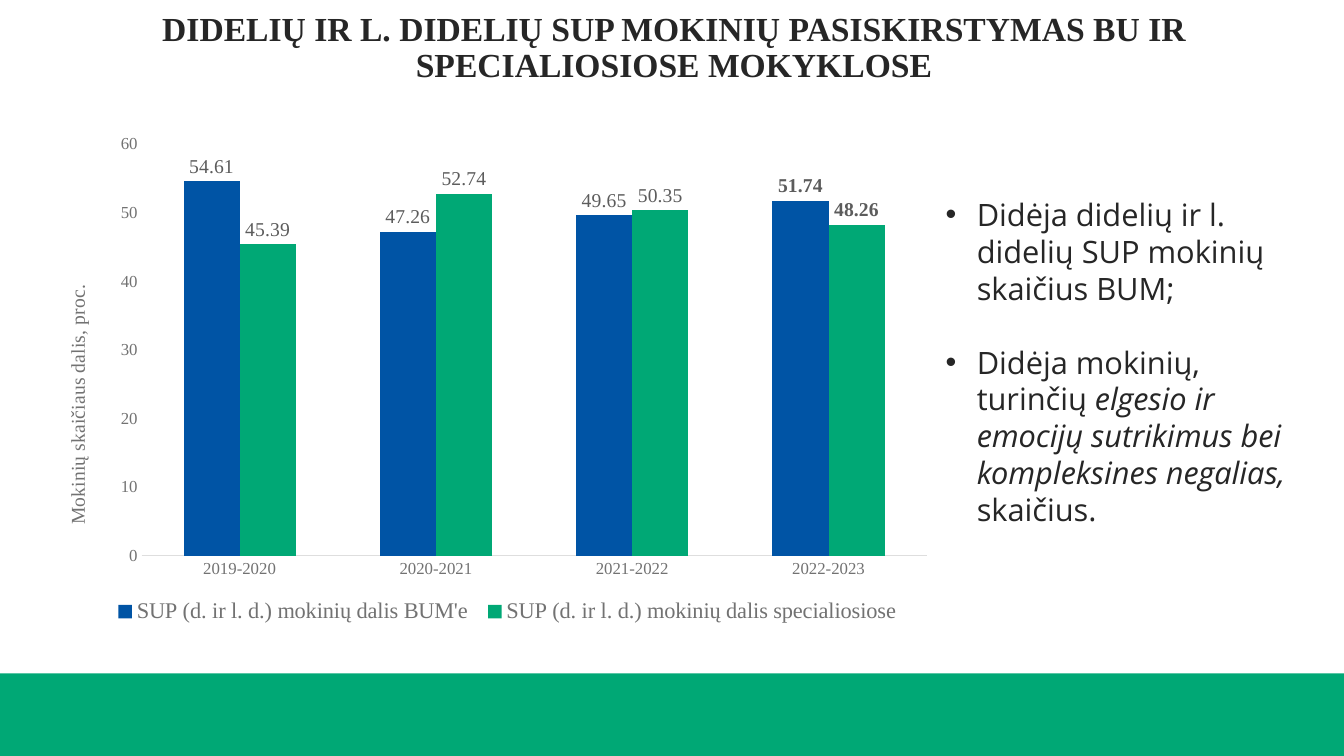
from dataclasses import dataclass

from lxml import etree
from pptx import Presentation, util as u
from pptx.chart.data import CategoryChartData
from pptx.dml.color import RGBColor
from pptx.enum import chart as ch, shapes, text
from pptx.oxml import ns


@dataclass(frozen=True)
class Theme:
    blue: str = "0054A5"
    green: str = "00A875"
    ink: str = "262626"
    gray: str = "727272"
    label: str = "5C5C5C"
    rule: str = "DEDEDE"
    serif: str = "Times New Roman"
    sans: str = "Open Sans"
    head: int = 24
    body: int = 22
    key: int = 16
    value: int = 14
    tick: int = 12


def put(item, **values):
    for name, value in values.items():
        setattr(item, name, value)


def add(parent, tag, **values):
    return etree.SubElement(parent, ns.qn(tag), values)


class Board:
    def __init__(self, deck, theme):
        self.theme = theme
        self.slide = deck.slides.add_slide(deck.slide_layouts[6])

    def paint(self, fill, color):
        fill.solid()
        fill.fore_color.rgb = RGBColor.from_string(color)

    def style(self, font, color, size, name, **more):
        put(font, size=u.Pt(size), name=name, **more)
        self.paint(font.fill, color)

    def band(self, *box):
        bar = self.slide.shapes.add_shape(shapes.MSO_SHAPE.RECTANGLE, *map(u.Inches, box))
        bar.shadow.inherit = False
        self.paint(bar.fill, self.theme.green)
        bar.line.fill.background()

    def frame(self, *box, **values):
        frame = self.slide.shapes.add_textbox(*map(u.Inches, box)).text_frame
        put(frame, word_wrap=True, **values)
        return frame

    def title(self, words, *box):
        t = self.theme
        para = self.frame(*box, vertical_anchor=text.MSO_ANCHOR.BOTTOM).paragraphs[0]
        put(para, text=words, alignment=text.PP_ALIGN.CENTER, line_spacing=0.9)
        self.style(para.runs[0].font, t.ink, t.head, t.serif, bold=True)

    def bullets(self, items, gap, *box):
        t = self.theme
        frame = self.frame(*box)
        for i, runs in enumerate(items):
            para = frame.add_paragraph() if i else frame.paragraphs[0]
            props = para._p.get_or_add_pPr()
            put(para, space_before=u.Pt(gap if i else 0))
            indent = u.Inches(0.31)
            props.set("marL", str(indent))
            props.set("indent", str(-indent))
            add(props, "a:buFont", typeface="Arial")
            add(props, "a:buChar", char="•")
            for words, slant in runs:
                run = para.add_run()
                run.text = words
                self.style(run.font, t.ink, t.body, t.sans, italic=slant)

    def place(self, item, **spots):
        layout = item.find(ns.qn("c:layout"))
        if layout is None:
            layout = etree.Element(ns.qn("c:layout"))
            before = item.find(ns.qn("c:tx"))
            if before is None:
                before = item.find(ns.qn("c:legendPos"))
            if before is None:
                item.insert(0, layout)
            else:
                before.addnext(layout)
        for old in list(layout):
            layout.remove(old)
        manual = add(layout, "c:manualLayout")
        for name, value in spots.items():
            add(manual, f"c:{name}", val=str(value))

    def columns(self, cats, series, label, *box):
        t = self.theme
        data = CategoryChartData(number_format="0.00")
        data.categories = cats
        for name, values, _ in series:
            data.add_series(name, values)
        chart = self.slide.shapes.add_chart(
            ch.XL_CHART_TYPE.COLUMN_CLUSTERED, *map(u.Inches, box), data).chart
        put(chart, has_title=False, has_legend=True)
        self.style(chart.font, t.ink, 10, t.sans)
        plot = chart.plots[0]
        put(plot, gap_width=150, overlap=0, vary_by_categories=False)
        for bars, (_, values, color) in zip(plot.series, series):
            self.paint(bars.format.fill, color)
            marks = bars.data_labels
            last = bars.points[len(values) - 1].data_label
            for mark, bold in ((last, True), (marks, False)):
                self.style(mark.font, t.label, t.value, t.serif, bold=bold)
                mark.position = ch.XL_LABEL_POSITION.OUTSIDE_END
            put(marks, show_value=True, number_format="0.00", number_format_is_linked=False)
        none = ch.XL_TICK_MARK.NONE
        for axis in (chart.category_axis, chart.value_axis):
            put(axis, has_major_gridlines=False, major_tick_mark=none, minor_tick_mark=none)
            self.style(axis.tick_labels.font, t.gray, t.tick, t.serif)
        line = chart.category_axis.format.line
        line.width = u.Pt(0.75)
        self.paint(line.fill, t.rule)
        scale = chart.value_axis
        put(scale, minimum_scale=0, maximum_scale=60, major_unit=10)
        scale.format.line.fill.background()
        put(scale.tick_labels, number_format="0", number_format_is_linked=False)
        para = scale.axis_title.text_frame.paragraphs[0]
        para.text = label
        self.style(para.runs[0].font, t.gray, t.value, t.serif, bold=False)
        key = chart.legend
        put(key, position=ch.XL_LEGEND_POSITION.BOTTOM, include_in_layout=False)
        self.style(key.font, t.gray, t.key, t.serif)
        edge = dict(xMode="edge", yMode="edge")
        self.place(key._element, **edge, x=0.07, y=0.91, w=0.9, h=0.08)
        self.place(scale.axis_title._element, **edge, x=0.02, y=0.3)
        area = chart._chartSpace.chart.plotArea
        self.place(area, layoutTarget="inner", **edge, x=0.11, y=0.03, w=0.88, h=0.81)


def main():
    deck = Presentation()
    put(deck, slide_width=u.Inches(13.33), slide_height=u.Inches(7.5))
    theme = Theme()
    board = Board(deck, theme)
    board.band(0, 6.68, 13.33, 0.82)
    board.title("DIDELIŲ IR L. DIDELIŲ SUP MOKINIŲ PASISKIRSTYMAS BU IR SPECIALIOSIOSE MOKYKLOSE",
                0.11, 0, 13.15, 0.89)
    board.columns(
        ["2019-2020", "2020-2021", "2021-2022", "2022-2023"],
        [("SUP (d. ir l. d.) mokinių dalis BUM'e", (54.61, 47.26, 49.65, 51.74), theme.blue),
         ("SUP (d. ir l. d.) mokinių dalis specialiosiose", (45.39, 52.74, 50.35, 48.26), theme.green)],
        "Mokinių skaičiaus dalis, proc.", 0.43, 1.28, 8.85, 5.04)
    board.bullets(
        [[("Didėja didelių ir l. didelių SUP mokinių skaičius BUM;", False)],
         [("Didėja mokinių, turinčių ", False),
          ("elgesio ir emocijų sutrikimus bei kompleksines negalias,", True),
          (" skaičius.", False)]],
        26.4, 9.28, 1.89, 3.66, 3.8)
    deck.save("out.pptx")


if __name__ == "__main__":
    main()
